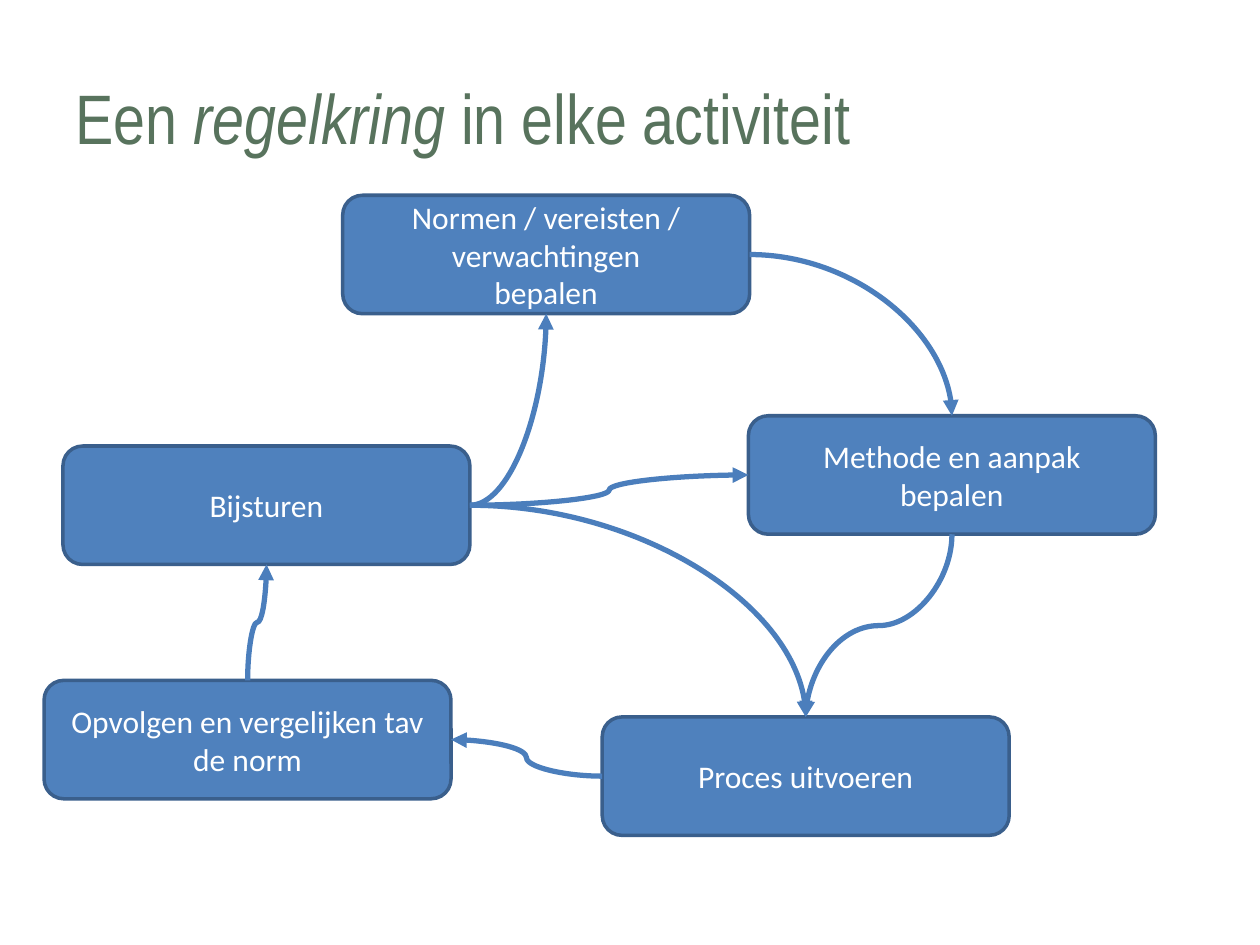
"""Build a slide showing the control loop found in every activity."""
import dataclasses

import pptx
import pptx.dml.color
import pptx.enum.shapes
import pptx.enum.text
import pptx.oxml
import pptx.oxml.ns
import pptx.util
from pptx.util import Inches

TOP, LEFT, BOTTOM, RIGHT = range(4)
BOX_WIDTH, BOX_HEIGHT = Inches(3.23), Inches(0.94)

BOXES = {
    "method": (5.94, 3.3, ["Methode en aanpak", "bepalen"]),
    "norms": (2.72, 1.55, ["Normen / vereisten / verwachtingen", "bepalen"]),
    "process": (4.78, 5.69, ["Proces uitvoeren"]),
    "follow_up": (0.35, 5.4, ["Opvolgen en vergelijken tav de norm"]),
    "adjust": (0.5, 3.54, ["Bijsturen"]),
}

ARROWS = [
    ("adjust", RIGHT, "process", TOP),
    ("adjust", RIGHT, "method", LEFT),
    ("norms", RIGHT, "method", TOP),
    ("method", BOTTOM, "process", TOP),
    ("process", LEFT, "follow_up", RIGHT),
    ("follow_up", TOP, "adjust", BOTTOM),
    ("adjust", RIGHT, "norms", BOTTOM),
]


def color(value):
    return pptx.dml.color.RGBColor.from_string(value)


@dataclasses.dataclass(frozen=True)
class Theme:
    title_font: str = "Arial Narrow"
    body_font: str = "Calibri"
    title_size: int = 40
    body_size: int = 18
    title_color: str = "58735D"
    text_color: str = "FFFFFF"
    box_fill: str = "4F81BD"
    box_line: str = "3A5F8C"
    arrow_color: str = "4B7EBC"
    box_line_width: int = 2
    arrow_width: int = 3


class SlideBuilder:
    def __init__(self, slide, theme):
        self.slide = slide
        self.theme = theme

    def format_font(self, font, name, size, value):
        font.name = name
        font.size = pptx.util.Pt(size)
        font.color.rgb = color(value)

    def title(self, runs):
        shape = self.slide.shapes.title
        shape.left, shape.top = Inches(0.5), Inches(0.3)
        shape.width, shape.height = Inches(8.23), Inches(1.25)
        frame = shape.text_frame
        frame.auto_size = pptx.enum.text.MSO_AUTO_SIZE.NONE
        frame.vertical_anchor = pptx.enum.text.MSO_ANCHOR.MIDDLE
        paragraph = frame.paragraphs[0]
        paragraph.alignment = pptx.enum.text.PP_ALIGN.LEFT
        self.format_font(paragraph.font, self.theme.title_font,
                         self.theme.title_size, self.theme.title_color)
        for text, italic in runs:
            run = paragraph.add_run()
            run.text = text
            run.font.italic = italic

    def box(self, left, top, lines):
        shape = self.slide.shapes.add_shape(
            pptx.enum.shapes.MSO_SHAPE.ROUNDED_RECTANGLE,
            Inches(left), Inches(top), BOX_WIDTH, BOX_HEIGHT)
        shape.shadow.inherit = False
        shape.fill.solid()
        shape.fill.fore_color.rgb = color(self.theme.box_fill)
        shape.line.color.rgb = color(self.theme.box_line)
        shape.line.width = pptx.util.Pt(self.theme.box_line_width)
        frame = shape.text_frame
        frame.word_wrap = True
        frame.vertical_anchor = pptx.enum.text.MSO_ANCHOR.MIDDLE
        frame.text = "\n".join(lines)
        for paragraph in frame.paragraphs:
            paragraph.alignment = pptx.enum.text.PP_ALIGN.CENTER
            self.format_font(paragraph.font, self.theme.body_font,
                             self.theme.body_size, self.theme.text_color)
        return shape

    def arrow(self, source, source_side, target, target_side):
        connector = self.slide.shapes.add_connector(
            pptx.enum.shapes.MSO_CONNECTOR.CURVE, 0, 0, 0, 0)
        connector.begin_connect(source, source_side)
        connector.end_connect(target, target_side)
        connector.line.color.rgb = color(self.theme.arrow_color)
        connector.line.width = pptx.util.Pt(self.theme.arrow_width)
        properties = connector.element.spPr
        line = properties.find(pptx.oxml.ns.qn("a:ln"))
        namespace = pptx.oxml.ns.nsdecls("a")
        line.append(pptx.oxml.parse_xml(f'<a:tailEnd {namespace} type="triangle"/>'))
        properties.append(pptx.oxml.parse_xml(f"<a:effectLst {namespace}/>"))
        if source_side % 2 != target_side % 2:
            geometry = properties.find(pptx.oxml.ns.qn("a:prstGeom"))
            geometry.set("prst", "curvedConnector2")
        if source_side in (TOP, BOTTOM):
            self.turn_upright(connector)

    def turn_upright(self, connector):
        """Rotate a connector a quarter turn so that it leaves vertically."""
        goes_up = connector.end_y < connector.begin_y
        goes_right = connector.end_x > connector.begin_x
        width, height = connector.width, connector.height
        connector.left += (width - height) // 2
        connector.top += (height - width) // 2
        connector.width, connector.height = height, width
        transform = connector.element.spPr.find(pptx.oxml.ns.qn("a:xfrm"))
        transform.set("rot", str(90 * 60000))
        transform.set("flipH", str(int(goes_up)))
        transform.set("flipV", str(int(goes_right)))


def main():
    presentation = pptx.Presentation()
    presentation.slide_width = Inches(10)
    presentation.slide_height = Inches(7.5)
    slide = presentation.slides.add_slide(presentation.slide_layouts[5])
    builder = SlideBuilder(slide, Theme())
    builder.title([("Een ", False), ("regelkring", True), (" in elke activiteit", False)])
    boxes = {name: builder.box(*details) for name, details in BOXES.items()}
    for source, source_side, target, target_side in ARROWS:
        builder.arrow(boxes[source], source_side, boxes[target], target_side)
    presentation.save("out.pptx")


if __name__ == "__main__":
    main()
